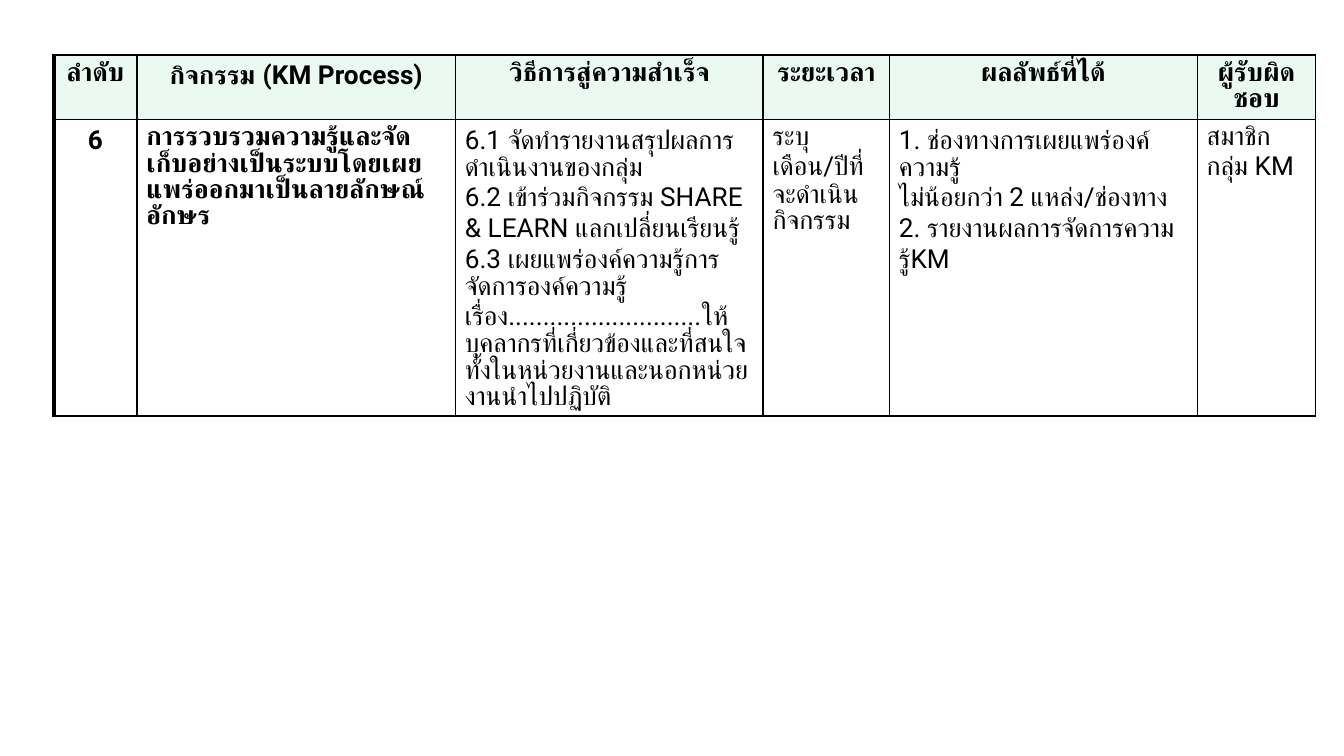
import pptx
import pptx.util
import pptx.dml.color
import pptx.enum.text
import pptx.oxml.ns
import lxml.etree

Inches, Pt = pptx.util.Inches, pptx.util.Pt
ALIGN = pptx.enum.text.PP_ALIGN
COLORS = {"text": "000000", "border": "000000", "header": "EAF9F1"}
COLUMNS = [0.62, 2.37, 2.29, 0.94, 2.29, 0.88]
ROWS = [0.48, 1.87]
HEADERS = [
    "ลำดับ", "กิจกรรม (KM Process)", "วิธีการสู่ความสำเร็จ",
    "ระยะเวลา", "ผลลัพธ์ที่ได้", "ผู้รับผิดชอบ",
]
CENTERED = {"bold": True, "align": ALIGN.CENTER, "before": 20}
BOLD = {"bold": True}
SPACED = {"before": 20}
ACTIVITY = [
    (["6"], CENTERED),
    (["การรวบรวมความรู้และจัดเก็บอย่างเป็นระบบโดยเผยแพร่ออกมาเป็นลายลักษณ์อักษร"], BOLD),
    ([
        "6.1 จัดทำรายงานสรุปผลการดำเนินงานของกลุ่ม",
        "6.2 เข้าร่วมกิจกรรม SHARE & LEARN แลกเปลี่ยนเรียนรู้",
        "6.3 เผยแพร่องค์ความรู้การจัดการองค์ความรู้เรื่อง............................"
        "ให้บุคลากรที่เกี่ยวข้องและที่สนใจทั้งในหน่วยงานและนอกหน่วยงานนำไปปฏิบัติ",
    ], {}),
    (["ระบุเดือน/ปีที่จะดำเนินกิจกรรม"], SPACED),
    ([
        "1. ช่องทางการเผยแพร่องค์ความรู้",
        "ไม่น้อยกว่า 2 แหล่ง/ช่องทาง",
        "2. รายงานผลการจัดการความรู้KM",
    ], {}),
    (["สมาชิกกลุ่ม KM"], SPACED),
]


def add_xml(parent, tag, **attributes):
    return lxml.etree.SubElement(parent, pptx.oxml.ns.qn(tag), **attributes)


class SlideBuilder:
    font = "Roboto"
    size = 14
    margins = {"margin_left": 0.07, "margin_top": 0.04, "margin_right": 0.07, "margin_bottom": 0.04}

    def __init__(self, s):
        self.s = s

    def table(self, left, top, columns, rows, contents):
        shape = self.s.shapes.add_table(
            len(rows), len(columns), Inches(left), Inches(top),
            Inches(sum(columns)), Inches(sum(rows)))
        table = shape.table
        table.first_row = table.horz_banding = False
        for column, width in zip(table.columns, columns):
            column.width = Inches(width)
        for i, (row, height) in enumerate(zip(table.rows, rows)):
            row.height = Inches(height)
            for j, (lines, style) in enumerate(contents[i]):
                cell = table.cell(i, j)
                self.borders(cell, 2.25 if j == 0 else 1)
                self.cell(cell, lines, style, "header" if i == 0 else None)

    def borders(self, cell, left_width):
        props = cell._tc.get_or_add_tcPr()
        for side, width in {"L": left_width, "R": 1, "T": 1, "B": 1}.items():
            line = add_xml(props, f"a:ln{side}", w=str(Pt(width)))
            add_xml(add_xml(line, "a:solidFill"), "a:srgbClr", val=COLORS["border"])

    def cell(self, cell, lines, style, fill):
        for name, value in self.margins.items():
            setattr(cell, name, Inches(value))
        if fill:
            cell.fill.solid()
            cell.fill.fore_color.rgb = pptx.dml.color.RGBColor.from_string(COLORS[fill])
        else:
            cell.fill.background()
        tf = cell.text_frame
        for i, line in enumerate(lines):
            p = tf.paragraphs[0] if i == 0 else tf.add_paragraph()
            self.paragraph(p, line, **style)

    def paragraph(self, p, text, bold=False, align=ALIGN.LEFT, before=0):
        p.alignment = align
        if before:
            spacing = add_xml(p._p.get_or_add_pPr(), "a:spcBef")
            add_xml(spacing, "a:spcPct", val=str(before * 1000))
        r = p.add_run()
        r.text = text
        for name, value in {"name": self.font, "size": Pt(self.size), "bold": bold}.items():
            setattr(r.font, name, value)
        r.font.color.rgb = pptx.dml.color.RGBColor.from_string(COLORS["text"])


def main():
    prs = pptx.Presentation()
    prs.slide_width = Inches(10)
    prs.slide_height = prs.slide_width * 9 // 16
    s = prs.slides.add_slide(prs.slide_layouts[6])
    header = [([title], CENTERED) for title in HEADERS]
    SlideBuilder(s).table(0.4, 0.41, COLUMNS, ROWS, [header, ACTIVITY])
    prs.save("out.pptx")


if __name__ == "__main__":
    main()
